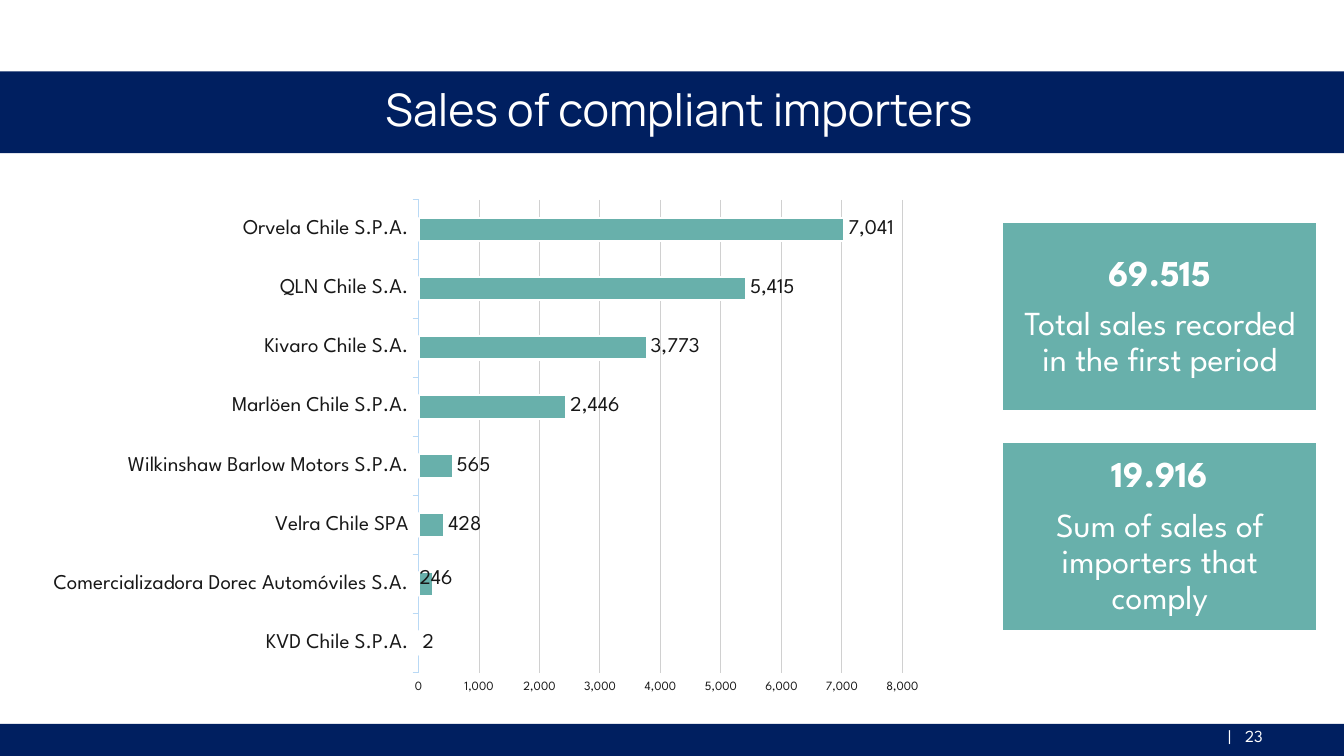
from dataclasses import dataclass

from lxml.etree import SubElement
from pptx import Presentation
from pptx.chart.data import CategoryChartData
from pptx.dml.color import RGBColor
from pptx.enum.chart import XL_CHART_TYPE, XL_LABEL_POSITION, XL_TICK_MARK
from pptx.enum.shapes import MSO_SHAPE
from pptx.enum.text import MSO_ANCHOR, MSO_AUTO_SIZE, PP_ALIGN
from pptx.oxml import parse_xml
from pptx.oxml.ns import nsdecls, qn
from pptx.util import Cm, Pt

NAVY = RGBColor(0x00, 0x1F, 0x60)
TEAL = RGBColor(0x68, 0xB0, 0xAB)
WHITE = RGBColor(0xFF, 0xFF, 0xFF)
INK = RGBColor(0x18, 0x18, 0x18)
GRID = RGBColor(0xD0, 0xD0, 0xD0)
TICK = RGBColor(0xB9, 0xD9, 0xF5)
BODY = "League Spartan"
HEAD = "Manrope"
WIDE = 33.87


@dataclass
class Card:
    top: float
    total: str
    note: str


@dataclass
class Sale:
    firm: str
    units: int


CARDS = [
    Card(5.61, "69.515", "Total sales recorded in the first period"),
    Card(11.15, "19.916", "Sum of sales of importers that comply"),
]
SALES = [
    Sale("KVD Chile S.P.A.", 2),
    Sale("Comercializadora Dorec Automóviles S.A.", 246),
    Sale("Velra Chile SPA", 428),
    Sale("Wilkinshaw Barlow Motors S.P.A.", 565),
    Sale("Marlöen Chile S.P.A.", 2446),
    Sale("Kivaro Chile S.A.", 3773),
    Sale("QLN Chile S.A.", 5415),
    Sale("Orvela Chile S.P.A.", 7041),
]


def style(font, size: float, color: RGBColor, name: str = BODY, bold: bool = False) -> None:
    font.size, font.name, font.bold = Pt(size), name, bold
    font.color.rgb = color


def add_rect(slide, left: float, top: float, width: float, height: float, fill: RGBColor):
    rect = slide.shapes.add_shape(
        MSO_SHAPE.RECTANGLE, Cm(left), Cm(top), Cm(width), Cm(height))
    rect.shadow.inherit = False
    rect.fill.solid()
    rect.fill.fore_color.rgb = fill
    rect.line.fill.background()
    return rect


def add_card(slide, card: Card) -> None:
    rect = add_rect(slide, 25.27, card.top, 7.92, 4.75, TEAL)
    rect.line.color.rgb = WHITE
    rect.line.width = Pt(1)
    frame = rect.text_frame
    frame.word_wrap = True
    frame.vertical_anchor = MSO_ANCHOR.MIDDLE
    frame.margin_left = frame.margin_right = Cm(0.28)
    frame.margin_top = frame.margin_bottom = Cm(0.28)
    frame.text = f"{card.total}\n{card.note}"
    for para, size, bold in zip(frame.paragraphs, (26, 24), (True, False)):
        para.alignment = PP_ALIGN.CENTER
        para.line_spacing = 0.9
        para.space_after = Pt(9)
        style(para.font, size, WHITE, bold=bold)


def add_layout(parent, at: int, x: float, y: float, w: float = 0, h: float = 0) -> None:
    """Place a chart part by shares of the chart's size."""
    size = f'<c:w val="{w}"/><c:h val="{h}"/>' if w else ""
    mode = ('<c:layoutTarget val="inner"/><c:xMode val="edge"/><c:yMode val="edge"/>'
            if w else "")
    parent.insert(at, parse_xml(
        f'<c:layout {nsdecls("c")}><c:manualLayout>{mode}'
        f'<c:x val="{x}"/><c:y val="{y}"/>{size}</c:manualLayout></c:layout>'))


def add_bars(slide) -> None:
    data = CategoryChartData(number_format="#,##0")
    data.categories = [sale.firm for sale in SALES]
    data.add_series("Series 1", [sale.units for sale in SALES])
    chart = slide.shapes.add_chart(
        XL_CHART_TYPE.BAR_CLUSTERED, Cm(0.84), Cm(4.78), Cm(22.58), Cm(12.95), data).chart
    chart.has_title = chart.has_legend = False
    style(chart.font, 10, NAVY)

    # Axes
    firms, units = chart.category_axis, chart.value_axis
    style(firms.tick_labels.font, 15, INK)
    style(units.tick_labels.font, 9, INK)
    firms.major_tick_mark = units.major_tick_mark = XL_TICK_MARK.OUTSIDE
    firms.format.line.color.rgb = TICK
    firms.format.line.width = Pt(0.75)
    units.format.line.fill.background()
    units.minimum_scale, units.maximum_scale, units.major_unit = 0, 8000, 1000
    units.tick_labels.number_format = "#,##0"
    units.tick_labels.number_format_is_linked = False
    grid = units.major_gridlines.format.line
    grid.color.rgb, grid.width = GRID, Pt(0.75)

    # Bars and labels
    plot = chart.plots[0]
    plot.gap_width, plot.vary_by_categories = 150, False
    bars = plot.series[0]
    bars.format.fill.solid()
    bars.format.fill.fore_color.rgb = TEAL
    bars.format.line.color.rgb = WHITE
    bars.format.line.width = Pt(1.5)
    tags = bars.data_labels
    tags.show_value = True
    tags.position = XL_LABEL_POSITION.OUTSIDE_END
    tags.number_format, tags.number_format_is_linked = "#,##0", False
    style(tags.font, 15, INK)

    # One label nudged to the left, and the plot area
    tag = bars.points[1].data_label
    style(tag.font, 15, INK)
    tag.position = XL_LABEL_POSITION.OUTSIDE_END
    add_layout(tags._element.find(qn("c:dLbl")), 1, -0.02, -0.01)
    area = chart.element.find(".//" + qn("c:plotArea"))
    for old in area.findall(qn("c:layout")):
        area.remove(old)
    add_layout(area, 0, 0.43, 0.02, 0.54, 0.92)


def add_title(slide) -> None:
    title = slide.shapes.title
    band = add_rect(slide, 0, 1.8, WIDE, 2.06, NAVY)
    title.element.addprevious(band.element)
    title.left, title.top, title.width, title.height = Cm(1.55), Cm(1.78), Cm(31.14), Cm(2.06)
    frame = title.text_frame
    frame.text = "Sales of compliant importers"
    frame.auto_size = MSO_AUTO_SIZE.NONE
    frame.vertical_anchor = MSO_ANCHOR.MIDDLE
    para = frame.paragraphs[0]
    para.alignment = PP_ALIGN.CENTER
    para.line_spacing = 0.9
    para.space_after = Pt(6)
    style(para.font, 32, WHITE, HEAD)


def add_foot(slide) -> None:
    add_rect(slide, 0, 18.24, WIDE, 0.83, NAVY)
    box = slide.shapes.add_textbox(Cm(30.7), Cm(18.03), Cm(1.4), Cm(1.02))
    frame = box.text_frame
    frame.word_wrap = True
    frame.vertical_anchor = MSO_ANCHOR.MIDDLE
    para = frame.paragraphs[0]
    para.text = "|\t23"
    para.space_after = Pt(6)
    stops = SubElement(para._p.get_or_add_pPr(), qn("a:tabLst"))
    SubElement(stops, qn("a:tab"), pos=str(Cm(0.43)), algn="l")
    style(para.font, 12, WHITE)


def main() -> None:
    deck = Presentation()
    deck.slide_width, deck.slide_height = Cm(WIDE), Cm(19.05)
    slide = deck.slides.add_slide(deck.slide_layouts[5])
    add_title(slide)
    add_foot(slide)
    add_bars(slide)
    for card in CARDS:
        add_card(slide, card)
    deck.save("out.pptx")


if __name__ == "__main__":
    main()
